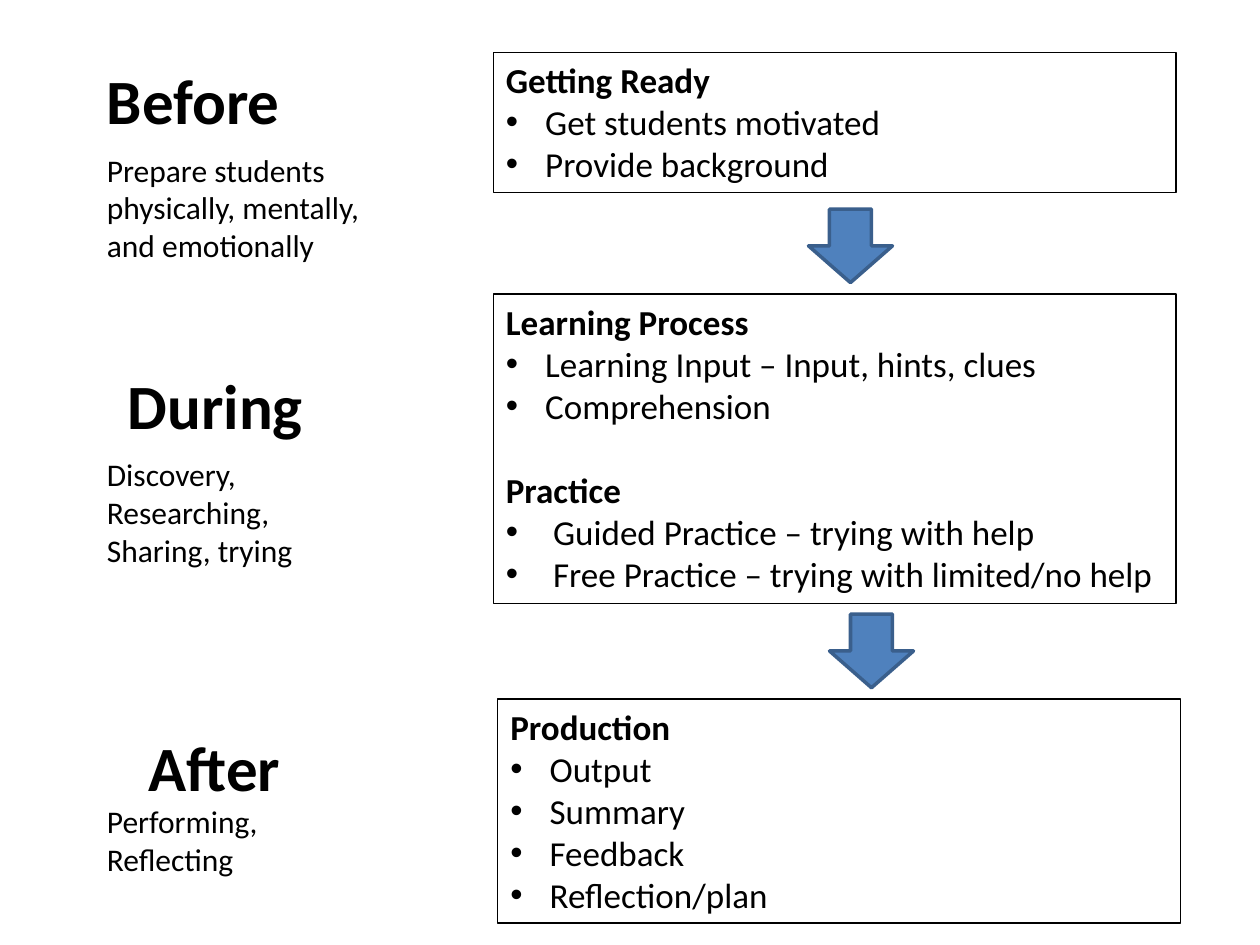
from lxml import etree
from pptx import Presentation
from pptx.dml.color import RGBColor
from pptx.enum import shapes, text
from pptx.oxml import ns
from pptx.util import Pt

BLACK = RGBColor(0x00, 0x00, 0x00)
BLUE = RGBColor(0x4F, 0x81, 0xBD)
DARK_BLUE = RGBColor(0x3A, 0x5F, 0x8C)
FONT = "Calibri"
BODY_SIZE = 20
SECTION_GAP = 24

STAGES = [
    ("Before", (54, 31.5), "Prepare students physically, mentally, and emotionally", 82.5, 73),
    ("During", (66, 206), "Discovery, Researching, Sharing, trying", 256.5, 73),
    ("After", (78, 412.5), "Performing, Reflecting", 455, 51),
]

STEPS = [
    ((282, 30, 390, 80), [
        ("Getting Ready", 22.5, ["Get students motivated", "Provide background"]),
    ]),
    ((282, 168, 390, 177), [
        ("Learning Process", 22.5, ["Learning Input – Input, hints, clues", "Comprehension"]),
        ("Practice", 27, ["Guided Practice – trying with help",
                          "Free Practice – trying with limited/no help"]),
    ]),
    ((284.5, 399.5, 390, 128), [
        ("Production", 22.5, ["Output", "Summary", "Feedback", "Reflection/plan"]),
    ]),
]

ARROWS = [(462, 119.5), (474, 351)]


def add_span(para, words, size, bold=False):
    para.alignment = text.PP_ALIGN.LEFT
    span = para.add_run()
    span.text = words
    span.font.name = FONT
    span.font.size = Pt(size)
    span.font.bold = bold
    span.font.color.rgb = BLACK


def set_bullet(para, indent):
    properties = para._p.get_or_add_pPr()
    properties.set("marL", str(Pt(indent)))
    properties.set("indent", str(-Pt(indent)))
    etree.SubElement(properties, ns.qn("a:buFont")).set("typeface", "Arial")
    etree.SubElement(properties, ns.qn("a:buChar")).set("char", "•")


def add_label(page, left, top, width, height, words, size, bold=False):
    box = page.shapes.add_textbox(Pt(left), Pt(top), Pt(width), Pt(height))
    box.text_frame.word_wrap = True
    add_span(box.text_frame.paragraphs[0], words, size, bold)


def add_step(page, bounds, sections):
    box = page.shapes.add_shape(shapes.MSO_SHAPE.RECTANGLE, *map(Pt, bounds))
    box.shadow.inherit = False
    box.fill.background()
    box.line.color.rgb = BLACK
    box.line.width = Pt(0.75)
    frame = box.text_frame
    frame.word_wrap = True
    frame.vertical_anchor = text.MSO_ANCHOR.TOP
    for number, (heading, indent, items) in enumerate(sections):
        para = frame.add_paragraph() if number else frame.paragraphs[0]
        if number:
            para.space_before = Pt(SECTION_GAP)
        add_span(para, heading, BODY_SIZE, bold=True)
        for item in items:
            para = frame.add_paragraph()
            add_span(para, item, BODY_SIZE)
            set_bullet(para, indent)


def add_down_arrow(page, left, top):
    arrow = page.shapes.add_shape(
        shapes.MSO_SHAPE.DOWN_ARROW, Pt(left), Pt(top), Pt(48), Pt(42))
    arrow.shadow.inherit = False
    arrow.fill.solid()
    arrow.fill.fore_color.rgb = BLUE
    arrow.line.color.rgb = DARK_BLUE
    arrow.line.width = Pt(2)


def main():
    deck = Presentation()
    deck.slide_width, deck.slide_height = Pt(720), Pt(540)
    page = deck.slides.add_slide(deck.slide_layouts[6])
    for bounds, sections in STEPS:
        add_step(page, bounds, sections)
    for left, top in ARROWS:
        add_down_arrow(page, left, top)
    for name, (left, top), note, note_top, note_height in STAGES:
        add_label(page, left, top, 138, 51, name, 36, bold=True)
        add_label(page, 54, note_top, 162, note_height, note, 18)
    deck.save("out.pptx")


if __name__ == "__main__":
    main()
